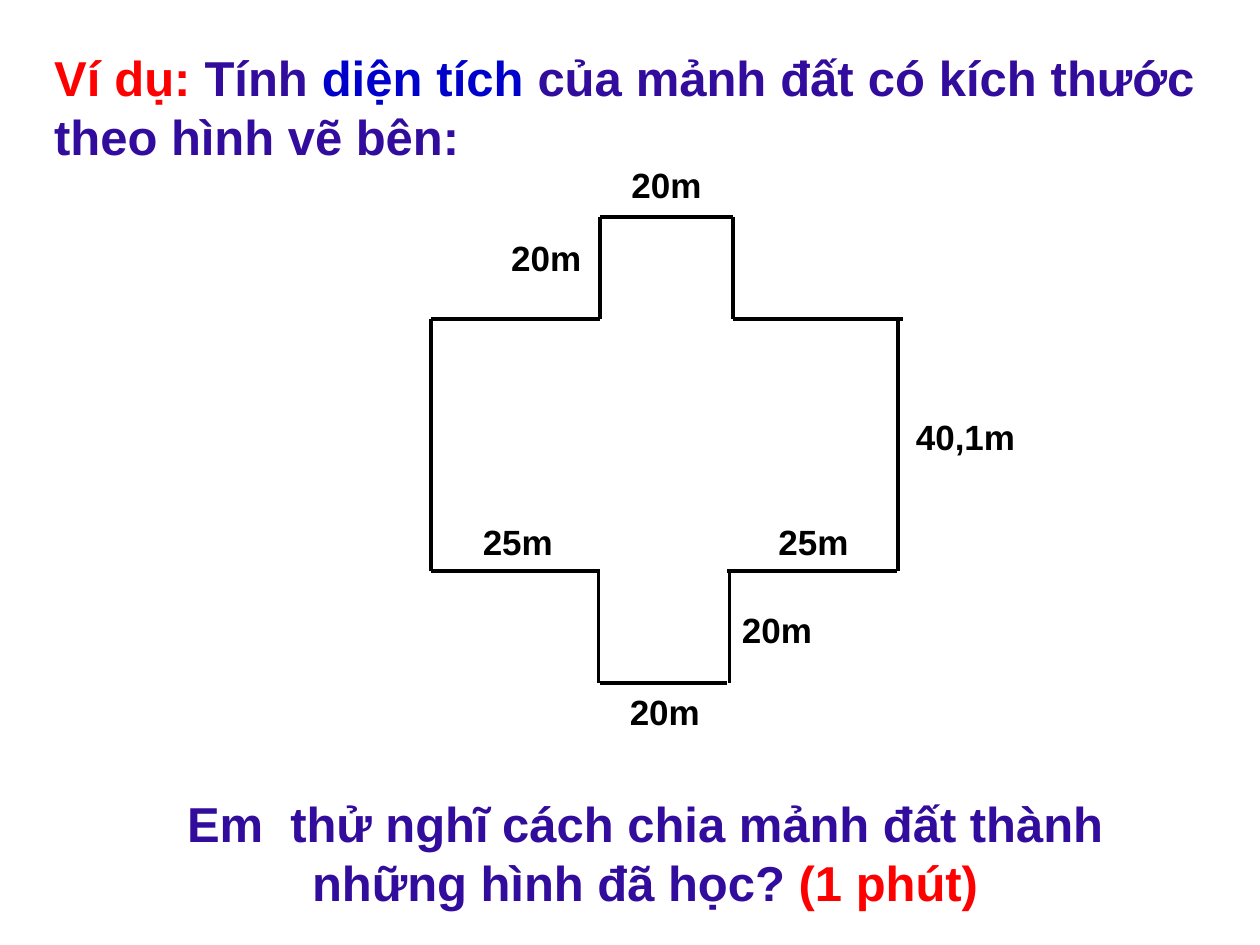
from lxml.etree import SubElement
from pptx import Presentation
from pptx.dml.color import RGBColor
from pptx.enum.shapes import MSO_CONNECTOR
from pptx.enum.text import MSO_ANCHOR, MSO_AUTO_SIZE, PP_ALIGN
from pptx.oxml.ns import qn
from pptx.util import Pt

PX = 9144  # 100 px to the inch
BLACK = RGBColor(0x00, 0x00, 0x00)
RED = RGBColor(0xFF, 0x00, 0x00)
BLUE = RGBColor(0x00, 0x00, 0xCC)
INDIGO = RGBColor(0x32, 0x0C, 0x9C)


def write_runs(frame, runs, size, align):
    frame.word_wrap = True
    frame.auto_size = MSO_AUTO_SIZE.NONE
    frame.vertical_anchor = MSO_ANCHOR.TOP
    paragraph = frame.paragraphs[0]
    paragraph.alignment = align
    for words, color in runs:
        run = paragraph.add_run()
        run.text = words
        run.font.name = "Arial"
        run.font.size = Pt(size)
        run.font.bold = True
        run.font.color.rgb = color


def add_text(left, top, width, height, runs, size, align):
    box = slide.shapes.add_textbox(left * PX, top * PX, width * PX, height * PX)
    write_runs(box.text_frame, runs, size, align)


presentation = Presentation()
presentation.slide_width = 1000 * PX
presentation.slide_height = 750 * PX
slide = presentation.slides.add_slide(presentation.slide_layouts[5])

# Problem statement
problem = slide.shapes.title
problem.left, problem.top = 33 * PX, 33 * PX
problem.width, problem.height = 925 * PX, 104 * PX
write_runs(problem.text_frame, [
    ("Ví dụ: ", RED),
    ("Tính ", INDIGO),
    ("diện tích ", BLUE),
    ("của mảnh đất có kích thước theo hình vẽ bên:", INDIGO),
], 28, PP_ALIGN.JUSTIFY)

# Sides of the plot of land: x1, y1, x2, y2
plot_sides = [
    (476, 172, 582, 172),
    (582, 172, 582, 253),
    (582, 253, 717, 253),
    (713, 253, 713, 453),
    (712, 453, 577, 453),
    (579, 453, 579, 542),
    (577, 542, 476, 542),
    (475, 542, 475, 453),
    (476, 453, 342, 453),
    (342, 453, 342, 253),
    (342, 253, 476, 253),
    (476, 253, 476, 172),
]
for ends in plot_sides:
    side = slide.shapes.add_connector(
        MSO_CONNECTOR.STRAIGHT, *[end * PX for end in ends])
    side.line.color.rgb = BLACK
    side.line.width = Pt(2.25)
    SubElement(side._element.spPr, qn("a:effectLst"))

# Measurements: left, top, width, words, alignment
measurements = [
    (475, 125, 108, "20m", PP_ALIGN.CENTER),
    (392, 183, 83, "20m", PP_ALIGN.CENTER),
    (717, 325, 108, "40,1m", PP_ALIGN.LEFT),
    (357, 408, 108, "25m", PP_ALIGN.CENTER),
    (608, 408, 83, "25m", PP_ALIGN.LEFT),
    (579, 478, 83, "20m", PP_ALIGN.LEFT),
    (490, 543, 83, "20m", PP_ALIGN.LEFT),
]
for left, top, width, words, align in measurements:
    add_text(left, top, width, 44, [(words, BLACK)], 20, align)

# Question to the class
add_text(83, 625, 858, 104, [
    ("Em  thử nghĩ cách chia mảnh đất thành những hình đã học? ", INDIGO),
    ("(1 phút)", RED),
], 28, PP_ALIGN.CENTER)

presentation.save("out.pptx")
